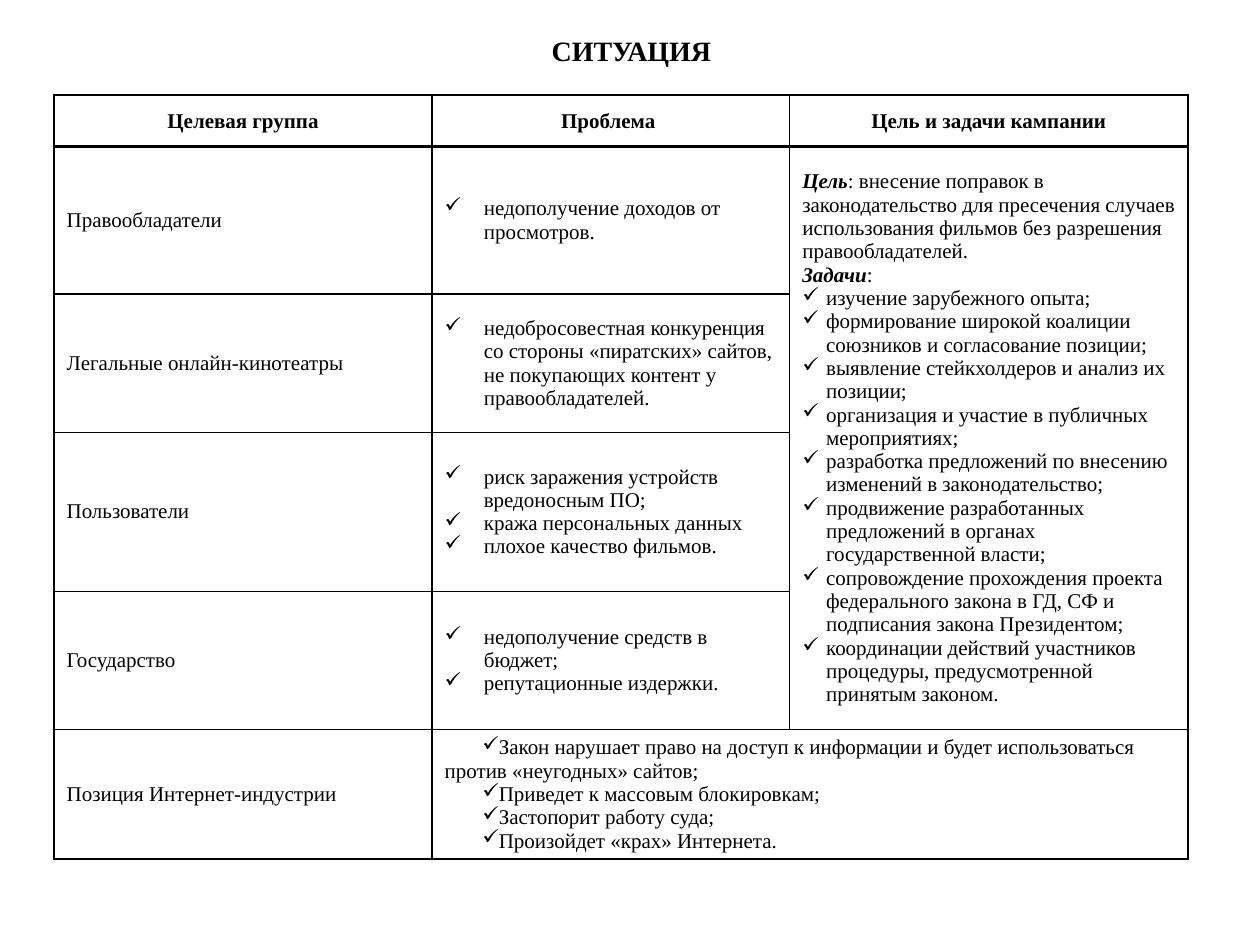
"""Builds a slide with a table of target groups, problems and campaign goals."""
from dataclasses import dataclass

from lxml import etree
from pptx import Presentation
from pptx import util as u
from pptx.dml.color import RGBColor
from pptx.enum import text
from pptx.oxml import ns


@dataclass(frozen=True)
class Theme:
    font: str = "Times New Roman"
    ink: str = "000000"
    paper: str = "FFFFFF"
    title: int = 16
    body: int = 12
    thin: int = 1
    thick: int = 2


@dataclass(frozen=True)
class Run:
    words: str
    bold: bool = False
    slant: bool = False


@dataclass(frozen=True)
class Para:
    runs: tuple[Run, ...]
    left: float = 0
    first: float = 0
    check: bool = False
    mid: bool = False


@dataclass(frozen=True)
class Entry:
    row: int
    col: int
    paras: list[Para]
    tall: int = 1
    wide: int = 1


THEME = Theme()
COLS = (7.62, 7.21, 8.03)
ROWS = (1.04, 2.97, 2.79, 3.2, 2.79, 2.59)
HEADS = ("Целевая группа", "Проблема ", "Цель и задачи кампании")
GROUPS = (
    "Правообладатели",
    "Легальные онлайн-кинотеатры",
    "Пользователи",
    "Государство",
    "Позиция Интернет-индустрии",
)
ISSUES = (
    ("недополучение доходов от просмотров.",),
    ("недобросовестная конкуренция со стороны «пиратских» сайтов, "
     "не покупающих контент у правообладателей.",),
    ("риск заражения устройств вредоносным ПО;", "кража персональных данных",
     "плохое качество фильмов."),
    ("недополучение средств в бюджет;", "репутационные издержки."),
)
GOAL = (": внесение поправок в законодательство для пресечения случаев "
        "использования фильмов без разрешения правообладателей.")
TASKS = (
    "изучение зарубежного опыта;",
    "формирование широкой коалиции союзников и согласование позиции;",
    "выявление стейкхолдеров и анализ их позиции;",
    "организация и участие в публичных мероприятиях;",
    "разработка предложений по внесению изменений в законодательство;",
    "продвижение разработанных предложений в органах государственной власти;",
    "сопровождение прохождения проекта федерального закона в ГД, СФ "
    "и подписания закона Президентом;",
    "координации действий участников процедуры, предусмотренной принятым законом.",
)
CLAIMS = (
    "Закон нарушает право на доступ к информации и будет использоваться "
    "против «неугодных» сайтов;",
    "Приведет к массовым блокировкам;",
    "Застопорит работу суда;",
    "Произойдет «крах» Интернета.",
)


def plain(words: str) -> Para:
    """Return an ordinary paragraph."""
    return Para((Run(words),))


def head(words: str, mid: bool = True) -> Para:
    """Return a bold centred paragraph."""
    return Para((Run(words, bold=True),), mid=mid)


def lead(term: str, rest: str) -> Para:
    """Return a paragraph that opens with a bold italic term."""
    return Para((Run(term, bold=True, slant=True), Run(rest)))


def checks(items: tuple[str, ...], left: float, first: float) -> list[Para]:
    """Return one check-marked paragraph per item."""
    return [Para((Run(item),), left, first, check=True) for item in items]


def write(frame, paras: list[Para], size: int) -> None:
    """Write paragraphs run by run into a text frame."""
    for i, para in enumerate(paras):
        p = frame.paragraphs[0] if i == 0 else frame.add_paragraph()
        p.alignment = text.PP_ALIGN.CENTER if para.mid else text.PP_ALIGN.LEFT
        if para.check:
            props = p._p.get_or_add_pPr()
            props.set("marL", str(u.Cm(para.left)))
            props.set("indent", str(u.Cm(para.first)))
            etree.SubElement(props, ns.qn("a:buChar")).set("char", "✓")
        for part in para.runs:
            run = p.add_run()
            run.text = part.words
            font = run.font
            font.name, font.size = THEME.font, u.Pt(size)
            font.bold, font.italic = part.bold, part.slant
            font.color.rgb = RGBColor.from_string(THEME.ink)


def edge(cell, widths: dict[str, int]) -> None:
    """Draw the cell borders, given a width in points for each side."""
    props = cell._tc.get_or_add_tcPr()
    for i, (side, width) in enumerate(widths.items()):
        line = etree.Element(ns.qn(f"a:ln{side}"), w=str(u.Pt(width)))
        fill = etree.SubElement(line, ns.qn("a:solidFill"))
        etree.SubElement(fill, ns.qn("a:srgbClr"), val=THEME.ink)
        props.insert(i, line)


def grid(slide):
    """Add the empty ruled table and return it."""
    table = slide.shapes.add_table(
        len(ROWS), len(COLS), u.Cm(1.09), u.Cm(1.92),
        u.Cm(sum(COLS)), u.Cm(sum(ROWS))).table
    table.first_row = table.horz_banding = False
    for col, width in zip(table.columns, COLS):
        col.width = u.Cm(width)
    for i, (row, height) in enumerate(zip(table.rows, ROWS)):
        row.height = u.Cm(height)
        top = THEME.thick if i == 1 else THEME.thin
        base = THEME.thick if i == 0 else THEME.thin
        for cell in row.cells:
            cell.fill.solid()
            cell.fill.fore_color.rgb = RGBColor.from_string(THEME.paper)
            cell.vertical_anchor = text.MSO_ANCHOR.MIDDLE
            edge(cell, {"L": THEME.thin, "R": THEME.thin, "T": top, "B": base})
    return table


def place(table, entry: Entry) -> None:
    """Merge the span of an entry and write its text."""
    cell = table.cell(entry.row, entry.col)
    if entry.tall > 1 or entry.wide > 1:
        cell.merge(table.cell(entry.row + entry.tall - 1,
                              entry.col + entry.wide - 1))
    write(cell.text_frame, entry.paras, THEME.body)


def main() -> None:
    """Build and save the slide."""
    deck = Presentation()
    deck.slide_width, deck.slide_height = u.Cm(25.4), u.Cm(19.05)
    slide = deck.slides.add_slide(deck.slide_layouts[5])
    title = slide.shapes.title
    title.left, title.top = u.Cm(1.3), u.Cm(0.33)
    title.width, title.height = u.Cm(22.86), u.Cm(1.37)
    title.text_frame.vertical_anchor = text.MSO_ANCHOR.MIDDLE
    write(title.text_frame, [head("СИТУАЦИЯ")], THEME.title)

    goals = [lead("Цель", GOAL), lead("Задачи", ":"), *checks(TASKS, 0.48, -0.48)]
    entries = [
        *(Entry(0, i, [head(words)]) for i, words in enumerate(HEADS)),
        *(Entry(i, 0, [plain(words)]) for i, words in enumerate(GROUPS, 1)),
        *(Entry(i, 1, checks(items, 0.79, -0.79)) for i, items in enumerate(ISSUES, 1)),
        Entry(1, 2, goals, tall=len(ISSUES)),
        Entry(5, 1, checks(CLAIMS, 0, 0.76), wide=2),
    ]
    table = grid(slide)
    for entry in entries:
        place(table, entry)
    deck.save("out.pptx")


if __name__ == "__main__":
    main()
